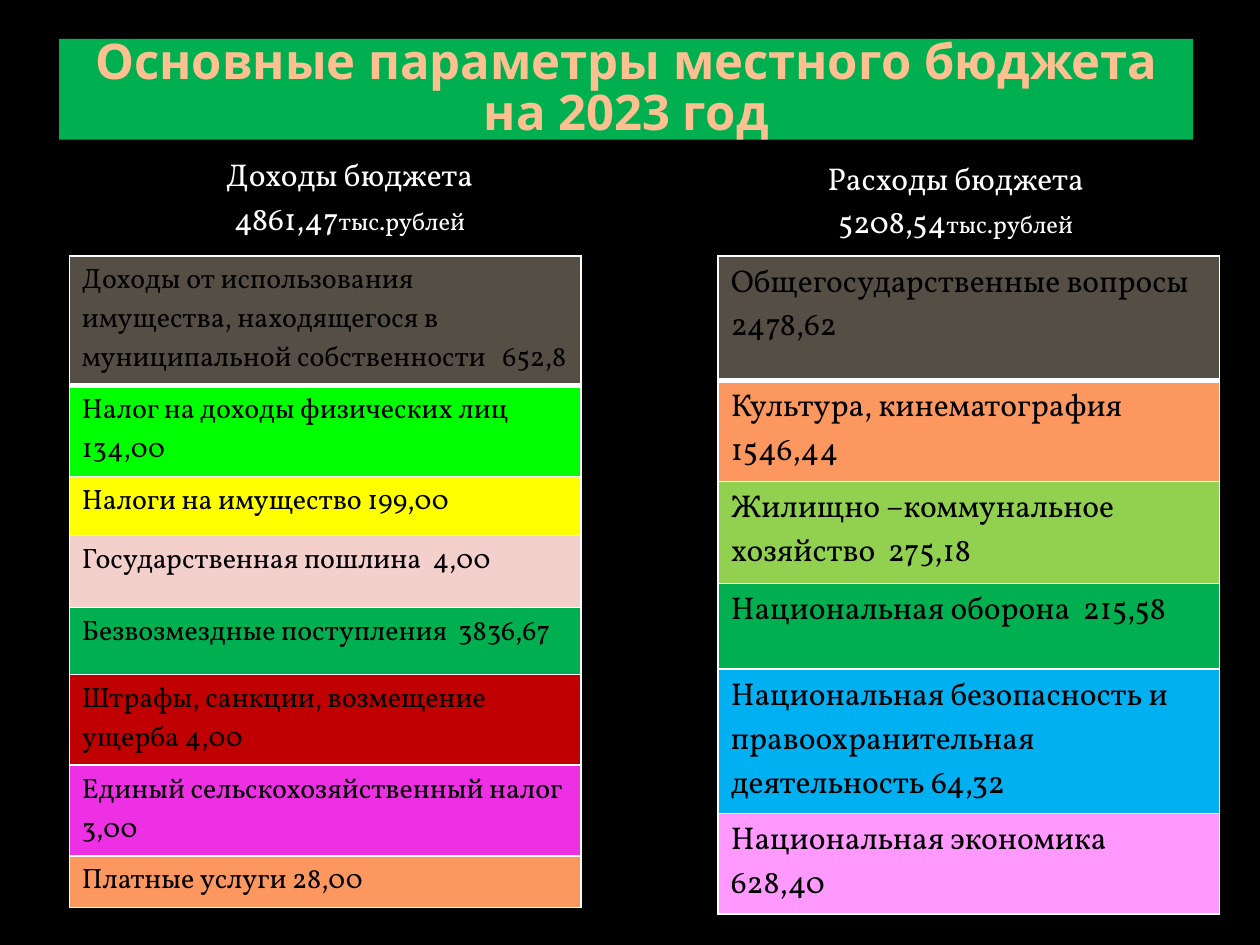
from lxml import etree
from pptx import Presentation
from pptx.dml.color import RGBColor
from pptx.enum.shapes import MSO_SHAPE
from pptx.enum.text import MSO_ANCHOR, PP_ALIGN
from pptx.oxml.ns import qn
from pptx.util import Inches, Pt

RECTANGLE = MSO_SHAPE.RECTANGLE
MIDDLE = MSO_ANCHOR.MIDDLE
CENTER = PP_ALIGN.CENTER
LEFT = PP_ALIGN.LEFT

COLUMNS, ROWS = 100, 75
PLAIN_TABLE_STYLE = "{2D5ABB26-0587-4C30-8999-92F81FD0307C}"
COLORS = {
    "black": "000000", "white": "FFFFFF", "peach": "FFC091", "brown": "554E45",
    "lime": "00FF00", "yellow": "FFFF00", "rose": "F4D0CC", "green": "00B050",
    "red": "C00000", "magenta": "EE30E5", "orange": "FC9760",
    "light green": "92D050", "blue": "00B0F0", "pink": "FF99FF",
}
INCOME = [
    ("Доходы от использования имущества, находящегося в  муниципальной собственности   652,8", "brown", 10.3),
    ("Налог на доходы физических лиц  134,00", "lime", 7.2),
    ("Налоги на имущество 199,00", "yellow", 4.7),
    ("Государственная пошлина  4,00", "rose", 5.7),
    ("Безвозмездные поступления  3836,67", "green", 5.3),
    ("Штрафы, санкции, возмещение ущерба 4,00", "red", 7.2),
    ("Единый сельскохозяйственный налог  3,00", "magenta", 7.2),
    ("Платные услуги 28,00", "orange", 4.1),
]
EXPENSES = [
    ("Общегосударственные вопросы  2478,62", "brown", 9.9),
    ("Культура, кинематография  1546,44", "orange", 8),
    ("Жилищно –коммунальное  хозяйство  275,18", "light green", 8.1),
    ("Национальная оборона  215,58", "green", 6.8),
    ("Национальная безопасность и правоохранительная деятельность 64,32", "blue", 11.4),
    ("Национальная экономика 628,40", "pink", 4.7),
]


class BudgetSlide:
    """Draws styled elements on one slide, measured in grid columns and rows."""

    def __init__(self, presentation):
        self.column = presentation.slide_width / COLUMNS
        self.row = presentation.slide_height / ROWS
        self.title_font, self.body_font = "Noto Sans", "Vollkorn"
        self.slide = presentation.slides.add_slide(presentation.slide_layouts[6])
        self.paint(self.slide.background.fill, "black")

    def box(self, left, top, width, height):
        return (round(left * self.column), round(top * self.row),
                round(width * self.column), round(height * self.row))

    def paint(self, fill, color):
        fill.solid()
        fill.fore_color.rgb = RGBColor.from_string(COLORS[color])

    def format_run(self, run, font, size, color, bold=False):
        run.font.name, run.font.size, run.font.bold = font, Pt(size), bold
        self.paint(run.font.fill, color)

    def title(self, text, *place):
        shape = self.slide.shapes.add_shape(RECTANGLE, *self.box(*place))
        shape.shadow.inherit = False
        self.paint(shape.fill, "green")
        shape.line.fill.background()
        text_frame = shape.text_frame
        text_frame.word_wrap = True
        text_frame.vertical_anchor = MIDDLE
        text_frame.text = text
        paragraph = text_frame.paragraphs[0]
        paragraph.alignment = CENTER
        paragraph.line_spacing = 0.87
        self.format_run(paragraph.runs[0], self.title_font, 28, "peach", True)

    def table(self, left, top, width, heights):
        frame = self.slide.shapes.add_table(
            len(heights), 1, *self.box(left, top, width, sum(heights)))
        table = frame.table
        table.first_row = table.horz_banding = False
        table._tbl.tblPr.find(qn("a:tableStyleId")).text = PLAIN_TABLE_STYLE
        for row, height in zip(table.rows, heights):
            row.height = round(height * self.row)
        return table

    def border(self, cell, **widths):
        properties = cell._tc.get_or_add_tcPr()
        for side, width in widths.items():
            line = etree.SubElement(properties, qn(f"a:ln{side}"), w=str(Pt(width)))
            fill = etree.SubElement(line, qn("a:solidFill"))
            etree.SubElement(fill, qn("a:srgbClr"), val=COLORS["white"])

    def heading(self, name, amount, left, top, width, height, indent=0.1):
        cell = self.table(left, top, width, [height]).cell(0, 0)
        cell.fill.background()
        cell.margin_left = Inches(indent)
        cell.text_frame.text = f"{name}\n{amount}"
        paragraphs = cell.text_frame.paragraphs
        paragraphs[1].add_run().text = "тыс.рублей"
        for paragraph in paragraphs:
            paragraph.alignment = CENTER
            for run, size in zip(paragraph.runs, (18, 14)):
                self.format_run(run, self.body_font, size, "white")

    def budget(self, items, left, top, width, size):
        table = self.table(left, top, width, [height for _, _, height in items])
        for index, (text, color, _) in enumerate(items):
            cell = table.cell(index, 0)
            self.border(cell, L=1, R=1, T=3 if index == 1 else 1, B=1 if index else 3)
            self.paint(cell.fill, color)
            cell.text_frame.text = text
            paragraph = cell.text_frame.paragraphs[0]
            paragraph.alignment = LEFT
            self.format_run(paragraph.runs[0], self.body_font, size, "black")


def main():
    presentation = Presentation()
    presentation.slide_width, presentation.slide_height = Inches(10), Inches(7.5)
    slide = BudgetSlide(presentation)
    slide.title("Основные параметры местного бюджета на 2023 год", 4.7, 3.1, 90, 8)
    slide.heading("Доходы бюджета", "4861,47", 5.2, 11.9, 45.1, 7.7)
    slide.heading("Расходы бюджета", "5208,54", 51.4, 12.2, 44.7, 7.6, indent=0.52)
    slide.budget(INCOME, 5.5, 20.3, 40.6, 16)
    slide.budget(EXPENSES, 57, 20.3, 39.8, 18)
    presentation.save("out.pptx")


if __name__ == "__main__":
    main()
